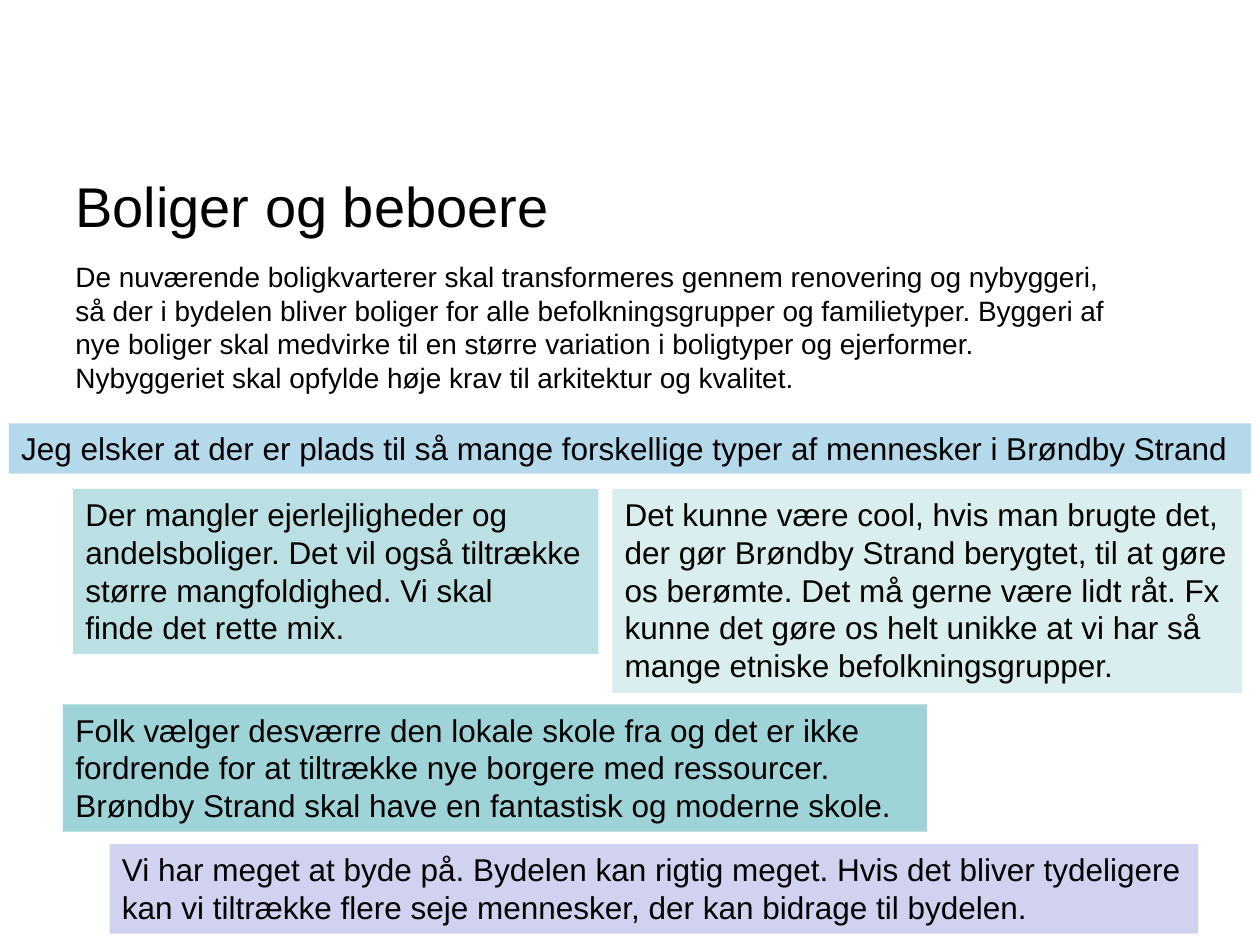
from pptx import Presentation
from pptx.dml.color import RGBColor
from pptx.enum.shapes import MSO_SHAPE
from pptx.enum.text import MSO_ANCHOR, MSO_AUTO_SIZE, PP_ALIGN
from pptx.util import Inches, Pt

RECT = MSO_SHAPE.RECTANGLE
TOP, MID = MSO_ANCHOR.TOP, MSO_ANCHOR.MIDDLE
LEFT = PP_ALIGN.LEFT
GROW, FIXED = MSO_AUTO_SIZE.SHAPE_TO_FIT_TEXT, MSO_AUTO_SIZE.NONE

THEME = {
    "font": "Arial", "ink": "000000",
    "title": 32, "body": 16, "quote": 18,
    "sky": "B4D9EA", "aqua": "BBE0E3", "teal": "9ED3D7",
    "lilac": "D1D1F0", "mist": "DAEDEF",
}
COLS, ROWS = 100, 75

deck = Presentation()
deck.slide_width, deck.slide_height = Inches(10), Inches(7.5)
slide = deck.slides.add_slide(deck.slide_layouts[6])
COL, ROW = deck.slide_width / COLS, deck.slide_height / ROWS


def put(text, col, row, wide, high, size="quote", fill=None, wrap=True, anchor=TOP):
    area = int(col * COL), int(row * ROW), int(wide * COL), int(high * ROW)
    if fill:
        box = slide.shapes.add_shape(RECT, *area)
        box.shadow.inherit = False
        box.fill.solid()
        box.fill.fore_color.rgb = RGBColor.from_string(THEME[fill])
        box.line.fill.background()
    else:
        box = slide.shapes.add_textbox(*area)
    frame = box.text_frame
    frame.text = text
    frame.word_wrap = wrap
    frame.auto_size = GROW if fill else FIXED
    frame.vertical_anchor = anchor
    for para in frame.paragraphs:
        para.alignment = LEFT
        para.font.name = THEME["font"]
        para.font.size = Pt(THEME[size])
        para.font.color.rgb = RGBColor.from_string(THEME["ink"])


put("Boliger og beboere", 5, 12.3, 90, 7.9, size="title", anchor=MID)
put("De nuværende boligkvarterer skal transformeres gennem renovering og nybyggeri, "
    "så der i bydelen bliver boliger for alle befolkningsgrupper og familietyper. "
    "Byggeri af nye boliger skal medvirke til en større variation i boligtyper og "
    "ejerformer. Nybyggeriet skal opfylde høje krav til arkitektur og kvalitet.",
    5, 20.1, 85.2, 45.2, size="body")

put("Jeg elsker at der er plads til så mange forskellige typer af mennesker "
    "i Brøndby Strand", 0.7, 33.6, 98.6, 4, fill="sky", wrap=False)
put("Der mangler ejerlejligheder og andelsboliger. Det vil også tiltrække "
    "større mangfoldighed. Vi skal\nfinde det rette mix.",
    5.8, 38.8, 41.7, 13.1, fill="aqua")
put("Folk vælger desværre den lokale skole fra og det er ikke fordrende for at "
    "tiltrække nye borgere med ressourcer. Brøndby Strand skal have en fantastisk "
    "og moderne skole.", 5, 55.9, 68.6, 10.1, fill="teal")
put("Vi har meget at byde på. Bydelen kan rigtig meget. Hvis det bliver tydeligere "
    "kan vi tiltrække flere seje mennesker, der kan bidrage til bydelen.",
    8.7, 67, 86.4, 7.1, fill="lilac")
put("Det kunne være cool, hvis man brugte det, der gør Brøndby Strand berygtet, "
    "til at gøre os berømte. Det må gerne være lidt råt. Fx kunne det gøre os helt "
    "unikke at vi har så mange etniske befolkningsgrupper.",
    48.6, 38.8, 50, 16.2, fill="mist")

deck.save("out.pptx")
